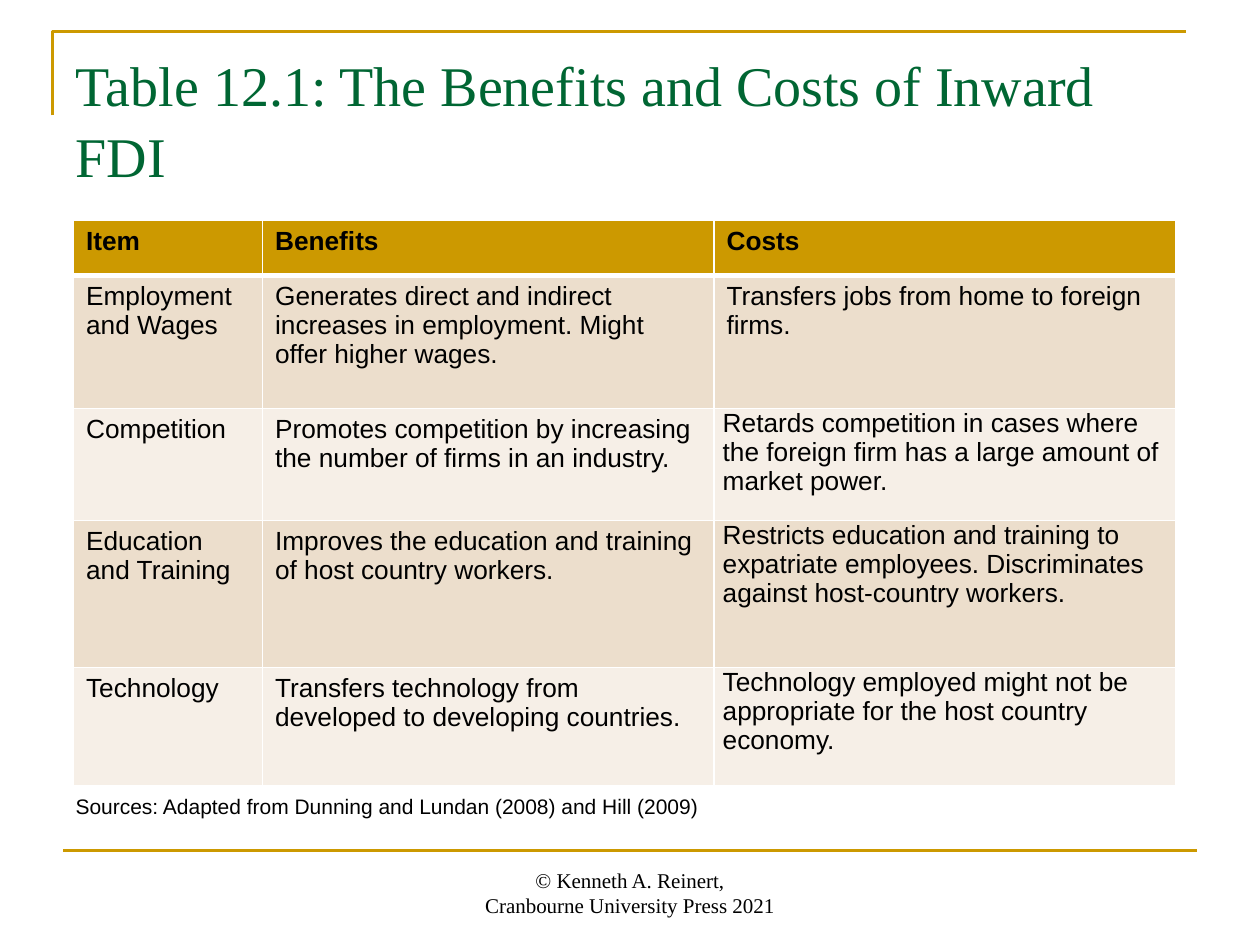
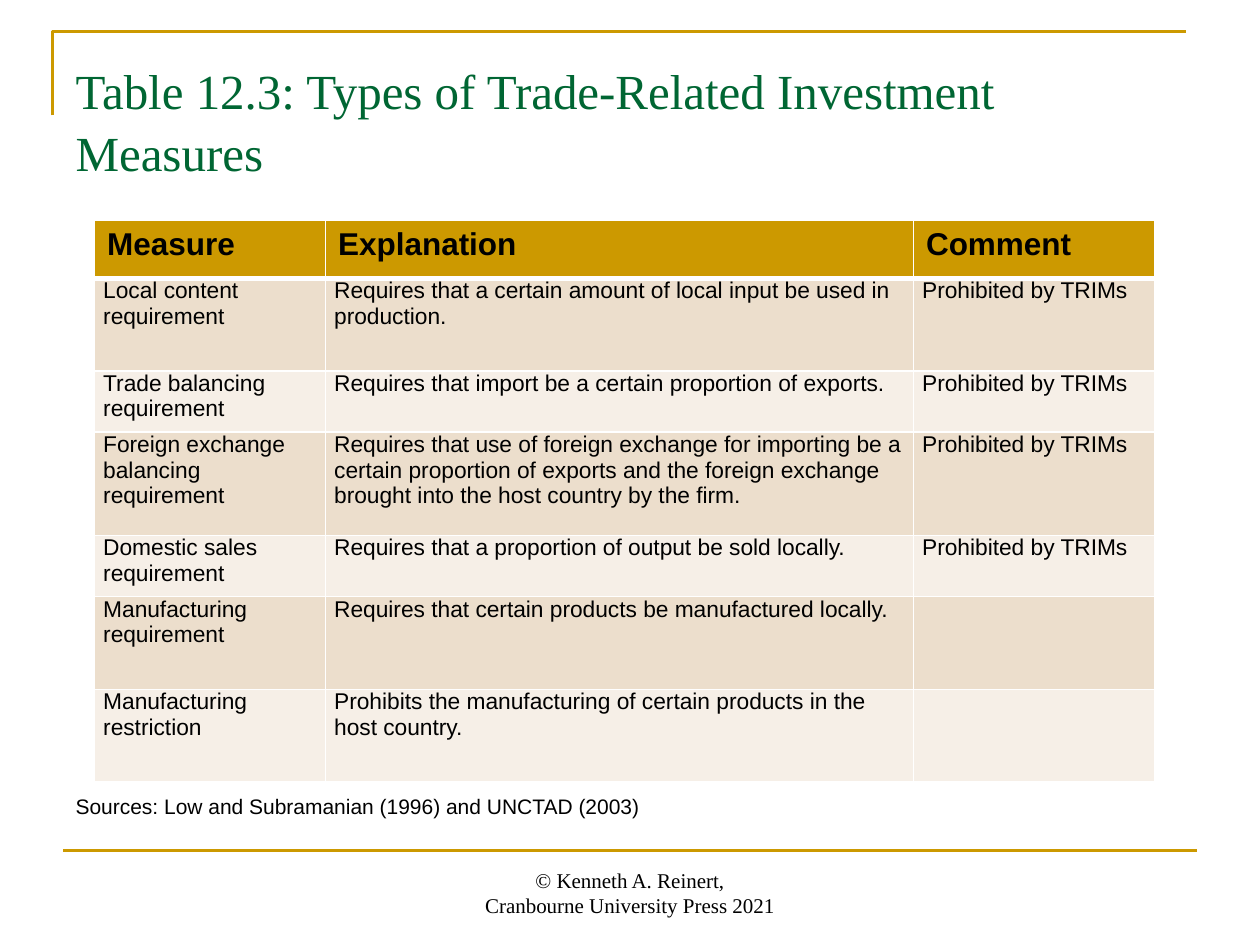
from lxml import etree
from pptx import Presentation
from pptx.dml.color import RGBColor
from pptx.enum.shapes import MSO_CONNECTOR
from pptx.enum.text import MSO_ANCHOR, MSO_AUTO_SIZE, PP_ALIGN
from pptx.oxml.ns import qn
from pptx.util import Pt

STRAIGHT = MSO_CONNECTOR.STRAIGHT
TOP, BOTTOM = MSO_ANCHOR.TOP, MSO_ANCHOR.BOTTOM
NO_AUTOFIT = MSO_AUTO_SIZE.NONE
LEFT, CENTER = PP_ALIGN.LEFT, PP_ALIGN.CENTER

GOLD = RGBColor(0xCC, 0x99, 0x00)
GREEN = RGBColor(0x00, 0x66, 0x33)
BLACK = RGBColor(0x00, 0x00, 0x00)
SAND = RGBColor(0xEC, 0xDE, 0xCC)
CREAM = RGBColor(0xF6, 0xEF, 0xE7)
SERIF, SANS = "Times New Roman", "Arial"
PROHIBITED = "Prohibited by TRIMs"

TABLE_SLIDES = [
    {
        "title": "Table 12.1: The Benefits and Costs of Inward FDI",
        "title_size": 32, "title_top": 21.6, "title_height": 90,
        "sources": "Sources: Adapted from Dunning and Lundan (2008) and Hill (2009)",
        "left": 42,
        "widths": [108, 258, 264],
        "heights": [31.5, 76, 64, 84, 67.5],
        "header_size": 15, "text_size": 15,
        "tight_cells": [(row, 2) for row in (2, 3, 4)],
        "rows": [
            ["Item", "Benefits", "Costs"],
            ["Employment and Wages",
             "Generates direct and indirect increases in employment. Might offer higher wages.",
             "Transfers jobs from home to foreign firms."],
            ["Competition",
             "Promotes competition by increasing the number of firms in an industry.",
             "Retards competition in cases where the foreign firm has a large amount of market power."],
            ["Education and Training",
             "Improves the education and training of host country workers.",
             "Restricts education and training to expatriate employees. "
             "Discriminates against host-country workers."],
            ["Technology",
             "Transfers technology from developed to developing countries.",
             "Technology employed might not be appropriate for the host country economy."],
        ],
    },
    {
        "title": "Table 12.3: Types of Trade-Related Investment Measures",
        "title_size": 28, "title_top": 27.4, "title_height": 51,
        "sources": "Sources: Low and Subramanian (1996) and UNCTAD (2003)",
        "left": 54,
        "widths": [132, 336, 138],
        "heights": [33, 53, 35, 59, 35, 53, 53],
        "header_size": 18, "text_size": 13,
        "tight_cells": [(row, column) for row in range(1, 7) for column in range(3)],
        "rows": [
            ["Measure", "Explanation", "Comment"],
            ["Local content requirement",
             "Requires that a certain amount of local input be used in production.", PROHIBITED],
            ["Trade balancing requirement",
             "Requires that import be a certain proportion of exports.", PROHIBITED],
            ["Foreign exchange balancing requirement",
             "Requires that use of foreign exchange for importing be a certain proportion of exports "
             "and the foreign exchange brought into the host country by the firm.", PROHIBITED],
            ["Domestic sales requirement",
             "Requires that a proportion of output be sold locally.", PROHIBITED],
            ["Manufacturing requirement",
             "Requires that certain products be manufactured locally.", ""],
            ["Manufacturing restriction",
             "Prohibits the manufacturing of certain products in the host country.", ""],
        ],
    },
]


def write(frame, text, size, font, color, align=LEFT, bold=False):
    frame.text = text
    for paragraph in frame.paragraphs:
        paragraph.alignment = align
        for run in paragraph.runs:
            run.font.size = Pt(size)
            run.font.name = font
            run.font.bold = bold
            run.font.color.rgb = color


def draw_borders(cell, row):
    properties = cell._tc.get_or_add_tcPr()
    widths = {"lnL": 1, "lnR": 1, "lnT": 3 if row == 1 else 1, "lnB": 3 if row == 0 else 1}
    for side, width in widths.items():
        border = etree.SubElement(properties, qn(f"a:{side}"), w=str(Pt(width)))
        fill = etree.SubElement(border, qn("a:solidFill"))
        etree.SubElement(fill, qn("a:srgbClr"), val="FFFFFF")


prs = Presentation()
prs.slide_width, prs.slide_height = Pt(720), Pt(540)
layout = prs.slide_layouts[1]
master_tree = prs.slide_master.element.cSld.spTree

for number, content in enumerate(TABLE_SLIDES):
    slide = prs.slides.add_slide(layout)

    if number == 0:
        outline = slide.shapes.build_freeform(Pt(30), Pt(66))
        outline.add_line_segments([(Pt(30), Pt(18)), (Pt(678), Pt(18))], close=False)
        corner_rule = outline.convert_to_shape()
        corner_rule.shadow.inherit = False
        corner_rule.fill.background()
        footer_rule = slide.shapes.add_connector(STRAIGHT, Pt(36), Pt(486), Pt(684), Pt(486))
        etree.SubElement(footer_rule.element.spPr, qn("a:effectLst"))
        for rule in (corner_rule, footer_rule):
            rule.line.color.rgb = GOLD
            rule.line.width = Pt(1.5)
            master_tree.append(rule.element)

    title = slide.shapes.title
    title.left, title.top = Pt(36), Pt(content["title_top"])
    title.width, title.height = Pt(648), Pt(content["title_height"])
    title.text_frame.auto_size = NO_AUTOFIT
    title.text_frame.vertical_anchor = TOP
    title.text_frame.margin_top = Pt(5.5)
    write(title.text_frame, content["title"], content["title_size"], SERIF, GREEN)
    title.text_frame.paragraphs[0].line_spacing = 1.05

    sources = slide.placeholders[1]
    sources.left, sources.top, sources.width, sources.height = Pt(36), Pt(126), Pt(648), Pt(356.4)
    sources.text_frame.auto_size = NO_AUTOFIT
    sources.text_frame.vertical_anchor = BOTTOM
    sources.text_frame.margin_bottom = Pt(14.4)
    write(sources.text_frame, content["sources"], 12, SANS, BLACK)
    bullet_properties = sources.text_frame.paragraphs[0]._p.get_or_add_pPr()
    bullet_properties.set("marL", "0")
    bullet_properties.set("indent", "0")
    etree.SubElement(bullet_properties, qn("a:buNone"))

    rows, widths, heights = content["rows"], content["widths"], content["heights"]
    table = slide.shapes.add_table(len(rows), len(widths), Pt(content["left"]), Pt(126),
                                   Pt(sum(widths)), Pt(sum(heights))).table
    for column, width in enumerate(widths):
        table.columns[column].width = Pt(width)
    for row, texts in enumerate(rows):
        table.rows[row].height = Pt(heights[row])
        header = row == 0
        for column, text in enumerate(texts):
            cell = table.cell(row, column)
            draw_borders(cell, row)
            cell.fill.solid()
            cell.fill.fore_color.rgb = GOLD if header else SAND if row % 2 else CREAM
            if (row, column) in content["tight_cells"]:
                cell.margin_left = cell.margin_right = Pt(5)
                cell.margin_top = cell.margin_bottom = Pt(0)
            size = content["header_size"] if header else content["text_size"]
            write(cell.text_frame, text, size, SANS, BLACK, bold=header)

    footer = slide.shapes.add_textbox(Pt(246), Pt(492), Pt(228), Pt(36)).text_frame
    footer.word_wrap = True
    footer.vertical_anchor = BOTTOM
    write(footer, "© Kenneth A. Reinert,\nCranbourne University Press 2021", 12, SERIF, BLACK, CENTER)

prs.save("out.pptx")
